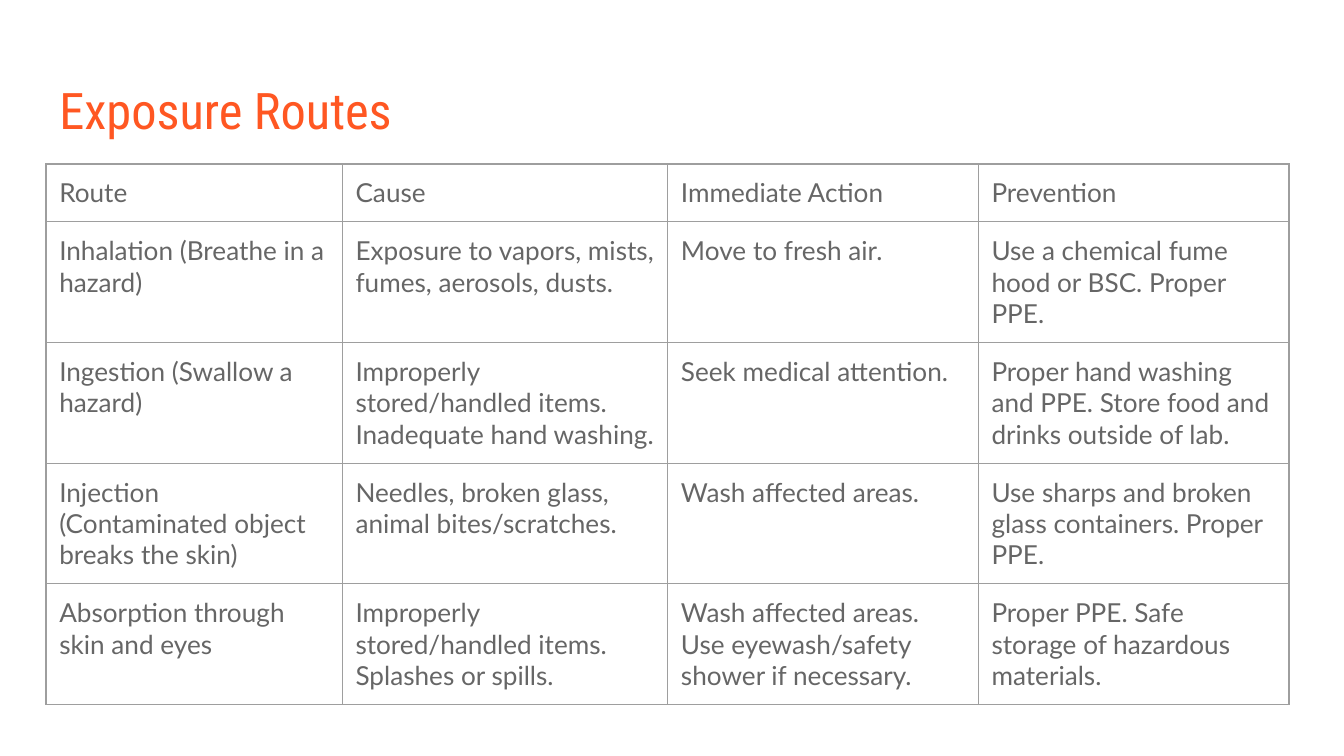
import dataclasses

import pptx
import pptx.dml.color
import pptx.enum.text
import pptx.oxml
import pptx.oxml.ns
import pptx.util

Cm = pptx.util.Cm
Pt = pptx.util.Pt
RGBColor = pptx.dml.color.RGBColor

ORANGE = RGBColor(0xFF, 0x57, 0x22)
GREY = RGBColor(0x66, 0x66, 0x66)
RULE = RGBColor(0x9E, 0x9E, 0x9E)
INSET = Cm(0.25)


@dataclasses.dataclass
class Route:
    name: str
    cause: str
    action: str
    prevent: str


@dataclasses.dataclass
class Style:
    font: str
    size: float
    color: RGBColor


HEAD = Style("Roboto Condensed", 27, ORANGE)
BODY = Style("Lato", 14, GREY)

# Heading row first, then one row per exposure route
ROUTES = [
    Route("Route", "Cause", "Immediate Action", "Prevention"),
    Route("Inhalation (Breathe in a hazard)",
          "Exposure to vapors, mists, fumes, aerosols, dusts.",
          "Move to fresh air.",
          "Use a chemical fume hood or BSC. Proper PPE."),
    Route("Ingestion (Swallow a hazard)",
          "Improperly stored/handled items. Inadequate hand washing.",
          "Seek medical attention.",
          "Proper hand washing and PPE. Store food and drinks outside of lab."),
    Route("Injection (Contaminated object breaks the skin)",
          "Needles, broken glass, animal bites/scratches.",
          "Wash affected areas.",
          "Use sharps and broken glass containers. Proper PPE."),
    Route("Absorption through skin and eyes",
          "Improperly stored/handled items. Splashes or spills.",
          "Wash affected areas. Use eyewash/safety shower if necessary.",
          "Proper PPE. Safe storage of hazardous materials."),
]
WIDTHS = [Cm(5.6), Cm(6.15), Cm(5.87), Cm(5.87)]
ROW = Cm(1.07)


def write(frame, text: str, style: Style) -> None:
    """Fill a text frame and format its runs."""
    frame.text = text
    for para in frame.paragraphs:
        para.alignment = pptx.enum.text.PP_ALIGN.LEFT
        for run in para.runs:
            run.font.name = style.font
            run.font.size = Pt(style.size)
            run.font.bold = False
            run.font.color.rgb = style.color


def pad(item) -> None:
    """Give a cell or text frame equal insets, with its text at the top."""
    item.margin_left = item.margin_right = INSET
    item.margin_top = item.margin_bottom = INSET
    item.vertical_anchor = pptx.enum.text.MSO_ANCHOR.TOP


def edge(cell) -> None:
    """Rule all four sides of a cell; lines come before the fill."""
    props = cell._tc.get_or_add_tcPr()
    for spot, side in enumerate(("lnL", "lnR", "lnT", "lnB")):
        line = pptx.oxml.parse_xml(
            f'<a:{side} {pptx.oxml.ns.nsdecls("a")} w="{Pt(0.75)}">'
            f'<a:solidFill><a:srgbClr val="{RULE}"/></a:solidFill>'
            f'</a:{side}>')
        props.insert(spot, line)


def draw(slide, routes: list[Route]) -> None:
    """Draw the table of routes; rows grow with their text."""
    frame = slide.shapes.add_table(
        len(routes), len(WIDTHS), Cm(0.87), Cm(3.1),
        sum(WIDTHS), ROW * len(routes))
    table = frame.table
    table.first_row = table.horz_banding = False
    for col, width in zip(table.columns, WIDTHS):
        col.width = width
    for row, route in zip(table.rows, routes):
        row.height = ROW
        for cell, text in zip(row.cells, dataclasses.astuple(route)):
            write(cell.text_frame, text, BODY)
            pad(cell)
            cell.fill.background()
            edge(cell)


def main() -> None:
    deck = pptx.Presentation()
    deck.slide_width, deck.slide_height = Cm(25.4), Cm(14.29)
    slide = deck.slides.add_slide(deck.slide_layouts[5])

    # Title
    title = slide.shapes.title
    title.left, title.top = Cm(0.87), Cm(1.24)
    title.width, title.height = Cm(23.67), Cm(1.6)
    write(title.text_frame, "Exposure Routes", HEAD)
    pad(title.text_frame)
    title.text_frame.auto_size = pptx.enum.text.MSO_AUTO_SIZE.NONE

    # Table
    draw(slide, ROUTES)
    deck.save("out.pptx")


if __name__ == "__main__":
    main()
